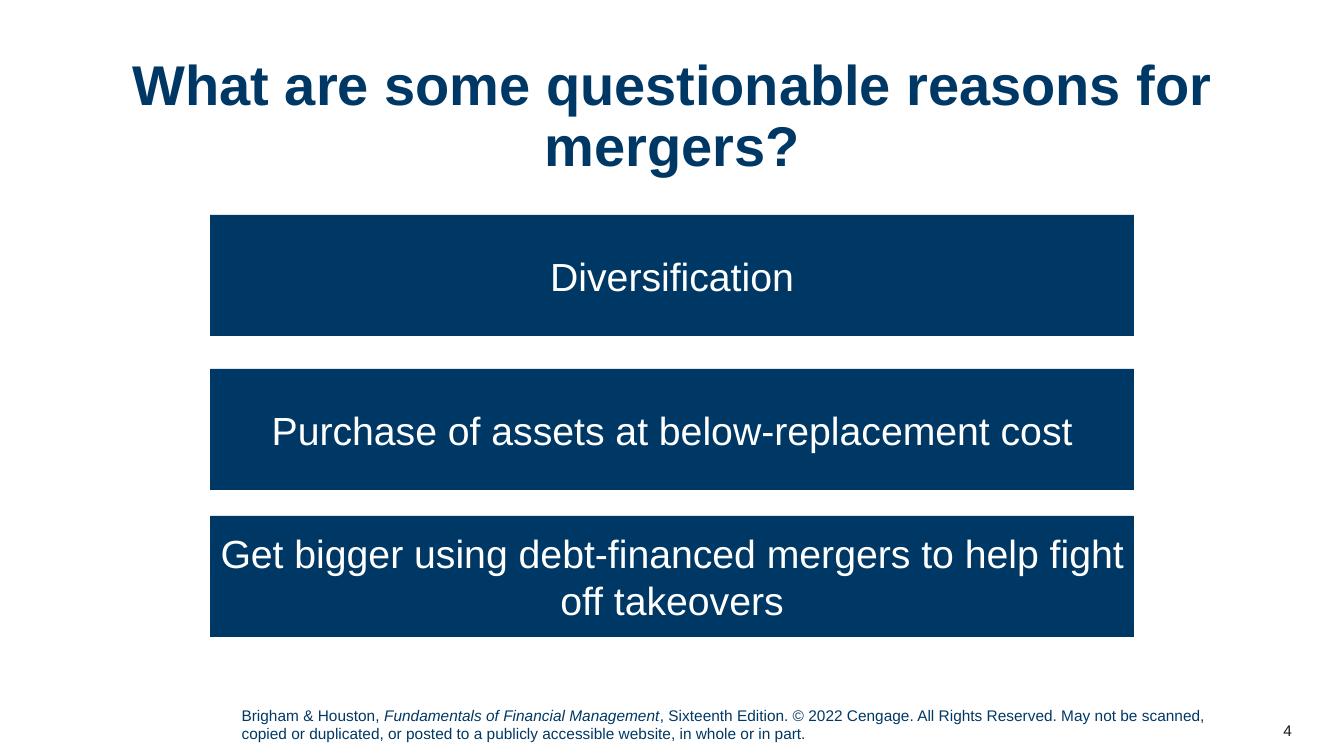
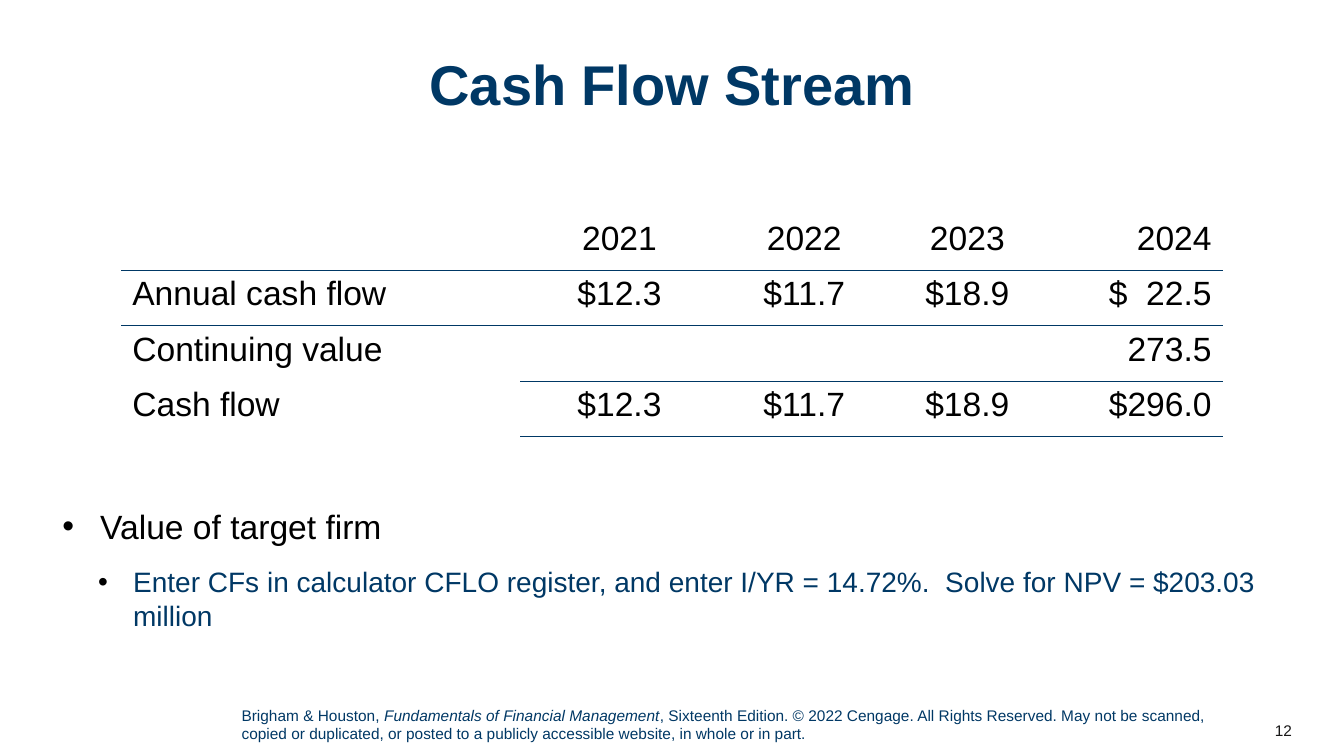
from lxml.etree import SubElement
from pptx import Presentation
from pptx.dml.color import RGBColor
from pptx.enum.shapes import MSO_SHAPE
from pptx.enum.text import MSO_ANCHOR, MSO_AUTO_SIZE, PP_ALIGN
from pptx.oxml.ns import qn
from pptx.util import Pt

# Content
COLORS = {"navy": "003865", "black": "000000", "white": "FFFFFF", "number": "181717"}
FONT = "Arial"
FOOTER = [
    ("Brigham & Houston, ", False),
    ("Fundamentals of Financial Management", True),
    (", Sixteenth Edition. © 2022 Cengage. All Rights Reserved. May not be scanned, "
     "copied or duplicated, or posted to a publicly accessible website, in whole or in part.", False),
]
REASONS = [  # top, text
    (153.5, "Diversification"),
    (263.5, "Purchase of assets at below-replacement cost"),
    (368.5, "Get bigger using debt-financed mergers to help fight off takeovers"),
]
CASH_FLOWS = [
    ["", "2021", "2022", "2023", "2024"],
    ["Annual cash flow", "$12.3", "$11.7", "$18.9", "$  22.5"],
    ["Continuing value", "", "", "", "273.5"],
    ["Cash flow", "$12.3", "$11.7", "$18.9", "$296.0"],
]
COLUMN_WIDTHS = [285, 142, 122, 111, 127]
COLUMN_ALIGNS = [PP_ALIGN.LEFT] + [PP_ALIGN.CENTER] * 3 + [PP_ALIGN.RIGHT]
ROW_HEIGHT = 39.6
RULES = {1: 0, 3: 1, 4: 1}  # rows above the rule: first ruled column
NO_TABLE_STYLE = "{2D5ABB26-0587-4C30-8999-92F81FD0307C}"
BULLETS = [  # text, level, size, colour, left margin, hanging indent, space before
    ("Value of target firm", 0, 24, "black", 27, 27, 0),
    ("Enter CFs in calculator CFLO register, and enter I/YR = 14.72%.  "
     "Solve for NPV = $203.03 million", 1, 20, "navy", 50.5, 25, 5),
]


# Shared helpers
def color(name):
    return RGBColor.from_string(COLORS[name])


def style_font(font, size, color_name, **extras):
    for name, value in {"name": FONT, "size": Pt(size), **extras}.items():
        setattr(font, name, value)
    font.color.rgb = color(color_name)


def set_frame(frame, anchor=MSO_ANCHOR.TOP):
    formats = {"word_wrap": True, "auto_size": MSO_AUTO_SIZE.NONE, "vertical_anchor": anchor}
    for name, value in formats.items():
        setattr(frame, name, value)
    return frame


def add_text(page, place, anchor=MSO_ANCHOR.TOP):
    box = page.shapes.add_textbox(*map(Pt, place))
    return set_frame(box.text_frame, anchor)


def add_page(deck, title, number):
    page = deck.slides.add_slide(deck.slide_layouts[5])
    # Title
    heading = page.shapes.title
    places = zip(("left", "top", "width", "height"), (37.5, 37.5, 885, 96))
    for name, value in places:
        setattr(heading, name, Pt(value))
    para = set_frame(heading.text_frame).paragraphs[0]
    para.text = title
    para.alignment = PP_ALIGN.CENTER
    para.line_spacing = 0.9
    style_font(para.font, 40, "navy", bold=True)
    # Footer and page number
    para = add_text(page, (165.5, 500.5, 705.5, 34)).paragraphs[0]
    for text, italic in FOOTER:
        span = para.add_run()
        span.text = text
        style_font(span.font, 11, "navy", italic=italic)
    para = add_text(page, (872.5, 507.5, 57.5, 29), MSO_ANCHOR.MIDDLE).paragraphs[0]
    para.text = str(number)
    para.alignment = PP_ALIGN.RIGHT
    style_font(para.font, 11, "number")
    return page


def add_border(cell, side):
    line = SubElement(cell._tc.get_or_add_tcPr(), qn("a:" + side), w=str(Pt(1)))
    fill = SubElement(line, qn("a:solidFill"))
    SubElement(fill, qn("a:srgbClr"), val=COLORS["navy"])


def add_bullet(para, margin, hanging):
    props = para._p.get_or_add_pPr()
    props.set("marL", str(Pt(margin)))
    props.set("indent", str(-Pt(hanging)))
    tint = SubElement(props, qn("a:buClr"))
    SubElement(tint, qn("a:srgbClr"), val=COLORS["black"])
    SubElement(props, qn("a:buFont"), typeface=FONT)
    SubElement(props, qn("a:buChar"), char="•")


# Slides
def add_reasons(deck):
    page = add_page(deck, "What are some questionable reasons for mergers?", 4)
    for top, text in REASONS:
        box = page.shapes.add_shape(MSO_SHAPE.RECTANGLE, Pt(150), Pt(top), Pt(660), Pt(86.5))
        box.shadow.inherit = False
        box.fill.solid()
        box.fill.fore_color.rgb = color("navy")
        box.line.fill.background()
        para = set_frame(box.text_frame, MSO_ANCHOR.MIDDLE).paragraphs[0]
        para.text = text
        para.alignment = PP_ALIGN.CENTER
        style_font(para.font, 28, "white")


def add_cash_table(page):
    frame = page.shapes.add_table(
        len(CASH_FLOWS), len(COLUMN_WIDTHS), Pt(86.5), Pt(153.5),
        Pt(sum(COLUMN_WIDTHS)), Pt(ROW_HEIGHT * len(CASH_FLOWS)))
    table = frame.table
    table.first_row = table.horz_banding = False
    table._tbl.tblPr.find(qn("a:tableStyleId")).text = NO_TABLE_STYLE
    for column, width in zip(table.columns, COLUMN_WIDTHS):
        column.width = Pt(width)
    for row, values in enumerate(CASH_FLOWS):
        table.rows[row].height = Pt(ROW_HEIGHT)
        for col, text in enumerate(values):
            cell = table.cell(row, col)
            cell.margin_left = cell.margin_right = Pt(8)
            for side, edge in (("lnT", row), ("lnB", row + 1)):
                if edge in RULES and col >= RULES[edge]:
                    add_border(cell, side)
            cell.fill.background()
            para = cell.text_frame.paragraphs[0]
            para.text = text
            para.alignment = COLUMN_ALIGNS[col]
            style_font(para.font, 24, "black")


def add_cash_flow(deck):
    page = add_page(deck, "Cash Flow Stream", 12)
    add_cash_table(page)
    frame = add_text(page, (37.5, 358, 885, 108))
    for index, (text, level, size, tint, margin, hanging, before) in enumerate(BULLETS):
        para = frame.add_paragraph() if index else frame.paragraphs[0]
        para.text = text
        para.level = level
        add_bullet(para, margin, hanging)
        para.space_before = Pt(before)
        para.space_after = Pt(8)
        style_font(para.font, size, tint)


def main():
    deck = Presentation()
    deck.slide_width, deck.slide_height = Pt(960), Pt(540)
    add_reasons(deck)
    add_cash_flow(deck)
    deck.save("out.pptx")


if __name__ == "__main__":
    main()
